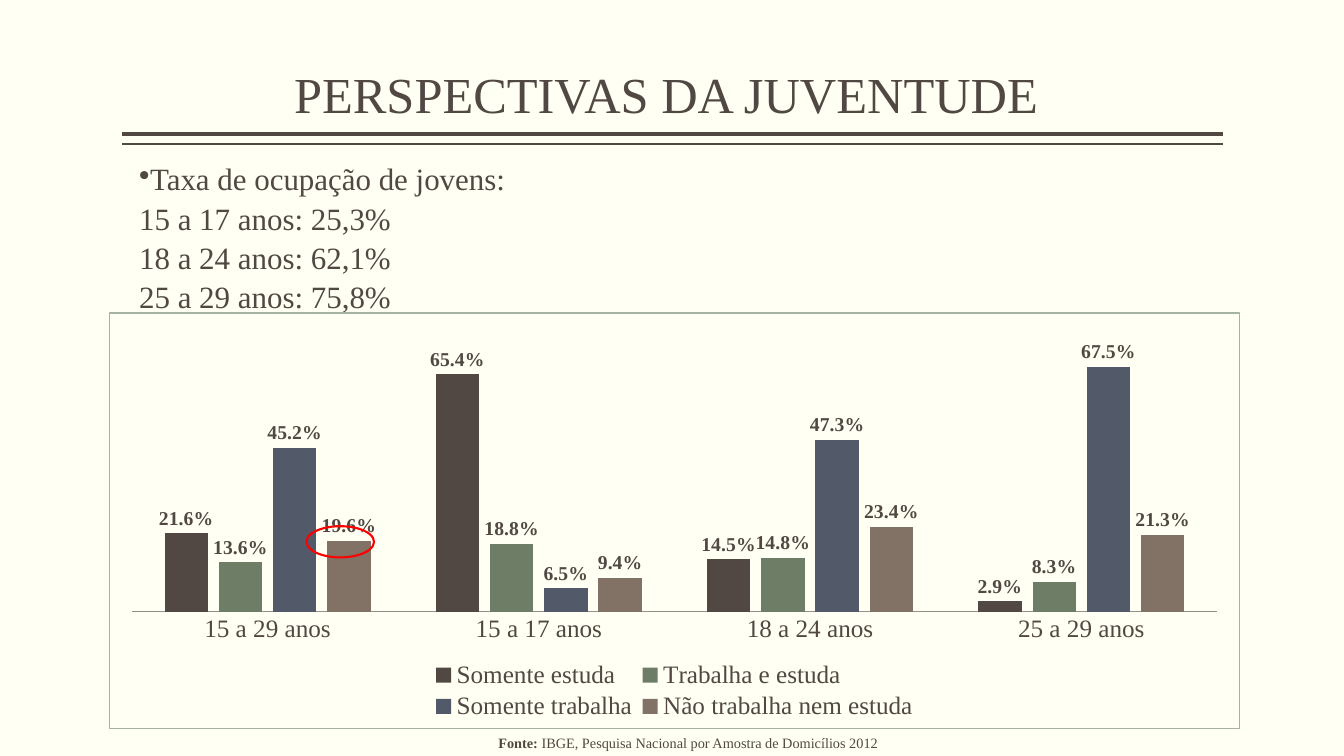
"""Build the slide on youth prospects with an occupation chart."""
from pptx import Presentation
from pptx.chart.data import CategoryChartData
from pptx.dml.color import RGBColor
from pptx.enum.chart import XL_CHART_TYPE, XL_LABEL_POSITION, XL_LEGEND_POSITION, XL_TICK_MARK
from pptx.enum.shapes import MSO_CONNECTOR, MSO_SHAPE
from pptx.enum.text import MSO_ANCHOR, PP_ALIGN
from pptx.oxml import parse_xml
from pptx.oxml.ns import nsdecls, qn
from pptx.util import Inches, Pt
from lxml.etree import SubElement

FONT = "Times New Roman"
COLORS = {"bg": "FFFFF3", "ink": "514843", "green": "6D7D66", "blue": "525A6A",
          "taupe": "827266", "border": "A7B3A1", "axis": "969189", "mark": "FF0000"}
TITLE = "PERSPECTIVAS DA JUVENTUDE "
RATES = ["Taxa de ocupação de jovens:", "15 a 17 anos: 25,3%",
         "18 a 24 anos: 62,1%", "25 a 29 anos: 75,8%"]
SOURCE = [("Fonte:", True), (" IBGE, Pesquisa Nacional por Amostra de Domicílios 2012", False)]
RULES = [(1.33, 3), (1.43, 1)]
AGES = ["15 a 29 anos", "15 a 17 anos", "18 a 24 anos", "25 a 29 anos"]
SERIES = [("Somente estuda ", "ink", (0.216, 0.654, 0.145, 0.029)),
          ("Trabalha e estuda", "green", (0.136, 0.188, 0.148, 0.083)),
          ("Somente trabalha", "blue", (0.452, 0.065, 0.473, 0.675)),
          ("Não trabalha nem estuda", "taupe", (0.196, 0.094, 0.234, 0.213))]


def rgb(name):
    return RGBColor.from_string(COLORS[name])


def set_font(font, size, bold=False):
    font.name, font.size, font.bold = FONT, Pt(size), bold
    font.color.rgb = rgb("ink")


def add_text(s, paragraphs, box, size, align=PP_ALIGN.LEFT, anchor=MSO_ANCHOR.TOP, spacing=0.9):
    tf = s.shapes.add_textbox(*map(Inches, box)).text_frame
    tf.word_wrap, tf.vertical_anchor = True, anchor
    tf.margin_left = tf.margin_right = 0
    for i, runs in enumerate(paragraphs):
        p = tf.paragraphs[0] if i == 0 else tf.add_paragraph()
        p.alignment = align
        p.line_spacing = 0.9 if i == 0 else spacing
        for text, bold in runs:
            r = p.add_run()
            r.text = text
            set_font(r.font, size, bold)
    return tf


def add_layout(parent, x, y, w, h, target="", after=None):
    for old in parent.findall(qn("c:layout")):
        parent.remove(old)
    inner = f'<c:layoutTarget val="{target}"/>' if target else ""
    inner += '<c:xMode val="edge"/><c:yMode val="edge"/>'
    inner += "".join(f'<c:{k} val="{v}"/>' for k, v in zip("xywh", (x, y, w, h)))
    layout = parse_xml(f'<c:layout {nsdecls("c")}><c:manualLayout>{inner}</c:manualLayout></c:layout>')
    if after is None:
        parent.insert(0, layout)
    else:
        after.addnext(layout)


def add_chart(s):
    data = CategoryChartData(number_format="0.0%")
    data.categories = AGES
    for name, _, values in SERIES:
        data.add_series(name, values)
    box = map(Inches, (1.08, 3.1, 11.22, 4.13))
    chart = s.shapes.add_chart(XL_CHART_TYPE.COLUMN_CLUSTERED, *box, data).chart
    set_font(chart.font, 10)
    chart.has_title = False
    plot = chart.plots[0]
    plot.gap_width, plot.overlap, plot.vary_by_categories = 150, -25, False
    for series, (_, color, _) in zip(plot.series, SERIES):
        series.format.fill.solid()
        series.format.fill.fore_color.rgb = rgb(color)
        labels = series.data_labels
        labels.show_value, labels.position = True, XL_LABEL_POSITION.OUTSIDE_END
        labels.number_format, labels.number_format_is_linked = "0.0%", False
        set_font(labels.font, 14, True)

    ages, shares = chart.category_axis, chart.value_axis
    ages.major_tick_mark = ages.minor_tick_mark = XL_TICK_MARK.NONE
    ages.format.line.color.rgb = rgb("axis")
    ages.format.line.width = Pt(0.75)
    set_font(ages.tick_labels.font, 18)
    shares.visible = shares.has_major_gridlines = False
    shares.minimum_scale, shares.maximum_scale = 0, 0.8

    chart.has_legend = True
    legend = chart.legend
    legend.position, legend.include_in_layout = XL_LEGEND_POSITION.BOTTOM, False
    set_font(legend.font, 18)
    root = chart.element
    add_layout(root.find(".//" + qn("c:plotArea")), 0.02, 0.02, 0.96, 0.7, "inner")
    pos = root.find(".//" + qn("c:legendPos"))
    add_layout(pos.getparent(), 0.28, 0.83, 0.44, 0.16, after=pos)
    root.find(qn("c:chart")).addnext(parse_xml(
        f'<c:spPr {nsdecls("c", "a")}><a:noFill/><a:ln w="{Pt(0.75)}"><a:solidFill>'
        f'<a:srgbClr val="{COLORS["border"]}"/></a:solidFill></a:ln></c:spPr>'))


def main():
    prs = Presentation()
    prs.slide_width, prs.slide_height = Inches(13.33), Inches(7.5)
    s = prs.slides.add_slide(prs.slide_layouts[6])
    s.background.fill.solid()
    s.background.fill.fore_color.rgb = rgb("bg")

    for y, width in RULES:
        rule = s.shapes.add_connector(MSO_CONNECTOR.STRAIGHT, *map(Inches, (12.13, y, 1.21, y)))
        rule.line.color.rgb, rule.line.width = rgb("ink"), Pt(width)
        SubElement(rule._element.spPr, qn("a:effectLst"))

    add_text(s, [[(TITLE, False)]], (1.21, 0.08, 10.92, 1.2), 36, PP_ALIGN.CENTER, MSO_ANCHOR.BOTTOM)
    tf = add_text(s, [[(rate, False)] for rate in RATES], (1.18, 1.58, 11.29, 1.5), 22.1, spacing=1.05)
    for i, p in enumerate(tf.paragraphs):
        pPr = p._p.get_or_add_pPr()
        pPr.set("marL", "0")
        pPr.set("indent", str(Inches(0.2)))
        if i == 0:
            SubElement(pPr, qn("a:buChar")).set("char", "•")
    add_text(s, [SOURCE], (1.18, 7.25, 11.29, 0.25), 10.2, PP_ALIGN.CENTER)

    add_chart(s)
    sp = s.shapes.add_shape(MSO_SHAPE.OVAL, *map(Inches, (3.04, 5.22, 0.67, 0.31)))
    sp.shadow.inherit = False
    sp.fill.background()
    sp.line.color.rgb, sp.line.width = rgb("mark"), Pt(1.5)
    prs.save("out.pptx")


if __name__ == "__main__":
    main()
